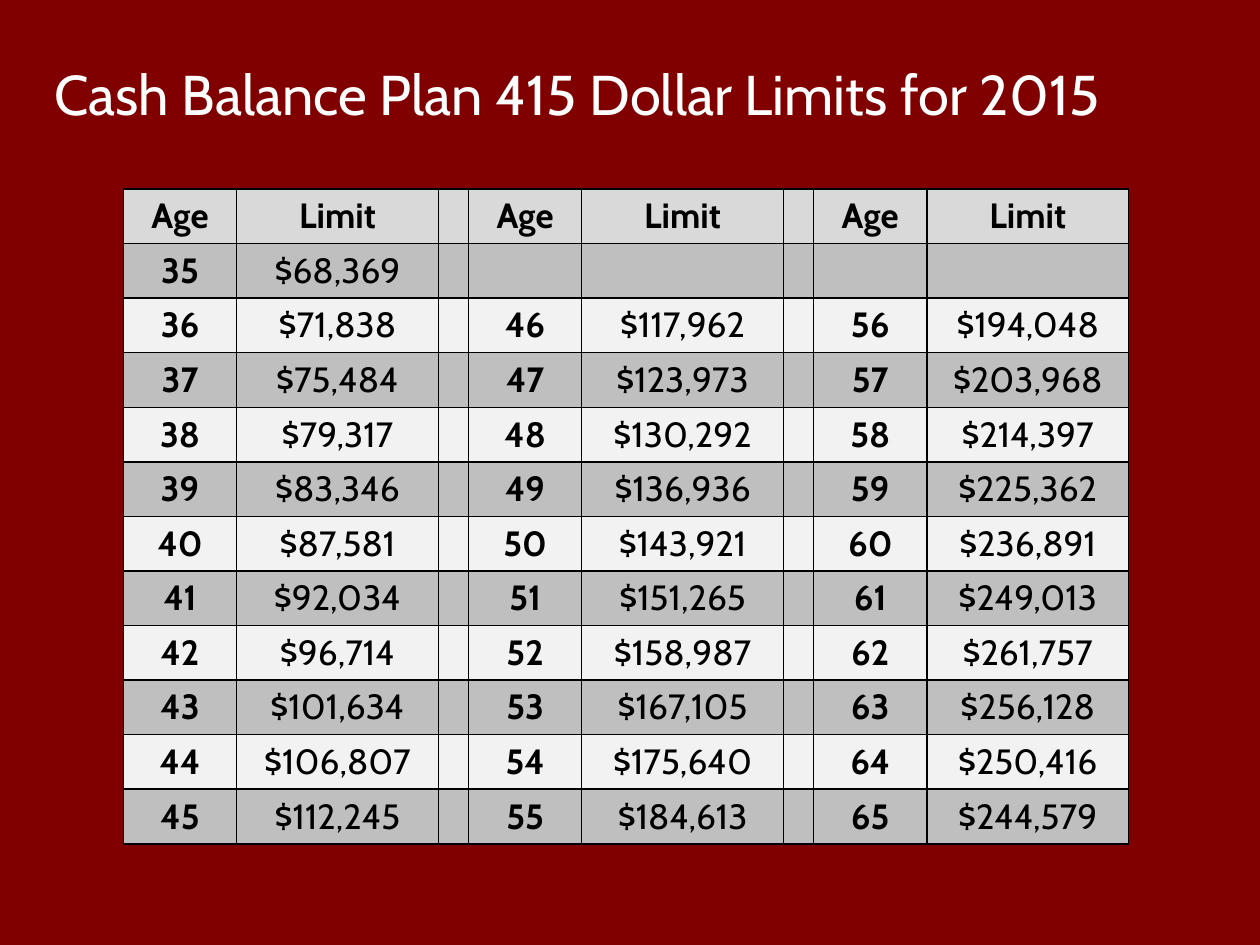
from lxml.etree import fromstring
from pptx import Presentation
from pptx.dml.color import RGBColor
from pptx.enum.text import MSO_ANCHOR, MSO_AUTO_SIZE, PP_ALIGN
from pptx.util import Cm, Pt

TITLE = "Cash Balance Plan 415 Dollar Limits for 2015"
HEADINGS = ("Age", "Limit")
AGE_GROUPS = [
    {"first_age": 35, "first_row": 1, "limits": [
        "$68,369", "$71,838", "$75,484", "$79,317", "$83,346", "$87,581",
        "$92,034", "$96,714", "$101,634", "$106,807", "$112,245"]},
    {"first_age": 46, "first_row": 2, "limits": [
        "$117,962", "$123,973", "$130,292", "$136,936", "$143,921",
        "$151,265", "$158,987", "$167,105", "$175,640", "$184,613"]},
    {"first_age": 56, "first_row": 2, "limits": [
        "$194,048", "$203,968", "$214,397", "$225,362", "$236,891",
        "$249,013", "$261,757", "$256,128", "$250,416", "$244,579"]},
]
COLORS = {"background": "800000", "title": "FFFFFF", "text": "000000", "border": "000000",
          "header": "D9D9D9", "odd": "BFBFBF", "even": "F2F2F2"}
FONT = "Cabin"
ROW_COUNT = 12
ROW_HEIGHT = Cm(1.1)
GROUP_WIDTHS = [Cm(2.28), Cm(4.07), Cm(0.6)]
COLUMN_WIDTHS = (GROUP_WIDTHS * len(AGE_GROUPS))[:-1]
NAMESPACE = "http://schemas.openxmlformats.org/drawingml/2006/main"


def color(name):
    return RGBColor.from_string(COLORS[name])


def set_font(paragraph, size, color_name, bold=False):
    paragraph.font.name = FONT
    paragraph.font.size = Pt(size)
    paragraph.font.bold = bold
    paragraph.font.color.rgb = color(color_name)


def format_cell(cell, fill_name):
    cell.fill.solid()
    cell.fill.fore_color.rgb = color(fill_name)
    cell.vertical_anchor = MSO_ANCHOR.MIDDLE
    cell.margin_top = cell.margin_bottom = 0
    properties = cell._tc.get_or_add_tcPr()
    for index, side in enumerate(("lnL", "lnR", "lnT", "lnB")):
        properties.insert(index, fromstring(
            f'<a:{side} xmlns:a="{NAMESPACE}" w="{Pt(1)}"><a:solidFill>'
            f'<a:srgbClr val="{COLORS["border"]}"/></a:solidFill></a:{side}>'))


def write_cell(cell, text, bold):
    paragraph = cell.text_frame.paragraphs[0]
    paragraph.text = text
    paragraph.alignment = PP_ALIGN.CENTER
    set_font(paragraph, 20, "text", bold)


def add_title(slide):
    title = slide.shapes.title
    title.left, title.top, title.width, title.height = Cm(0.84), Cm(1.07), Cm(23.47), Cm(1.63)
    frame = title.text_frame
    frame.text = TITLE
    frame.word_wrap = True
    frame.auto_size = MSO_AUTO_SIZE.NONE
    frame.vertical_anchor = MSO_ANCHOR.TOP
    paragraph = frame.paragraphs[0]
    paragraph.alignment = PP_ALIGN.LEFT
    set_font(paragraph, 32, "title")


def add_limits_table(slide):
    table = slide.shapes.add_table(
        ROW_COUNT, len(COLUMN_WIDTHS), Cm(2.49), Cm(3.81),
        sum(COLUMN_WIDTHS), ROW_HEIGHT * ROW_COUNT).table
    table.first_row = table.horz_banding = False
    for column, width in zip(table.columns, COLUMN_WIDTHS):
        column.width = width
    for row_index, row in enumerate(table.rows):
        row.height = ROW_HEIGHT
        fill_name = "header" if row_index == 0 else ("even", "odd")[row_index % 2]
        for cell in row.cells:
            format_cell(cell, fill_name)
    for group_index, group in enumerate(AGE_GROUPS):
        age_column = group_index * len(GROUP_WIDTHS)
        for offset, heading in enumerate(HEADINGS):
            write_cell(table.cell(0, age_column + offset), heading, True)
        for offset, limit in enumerate(group["limits"]):
            row_index = group["first_row"] + offset
            write_cell(table.cell(row_index, age_column), str(group["first_age"] + offset), True)
            write_cell(table.cell(row_index, age_column + 1), limit, False)


def main():
    presentation = Presentation()
    presentation.slide_width, presentation.slide_height = Cm(25.4), Cm(19.05)
    slide = presentation.slides.add_slide(presentation.slide_layouts[5])
    slide.background.fill.solid()
    slide.background.fill.fore_color.rgb = color("background")
    add_title(slide)
    add_limits_table(slide)
    presentation.save("out.pptx")


if __name__ == "__main__":
    main()
